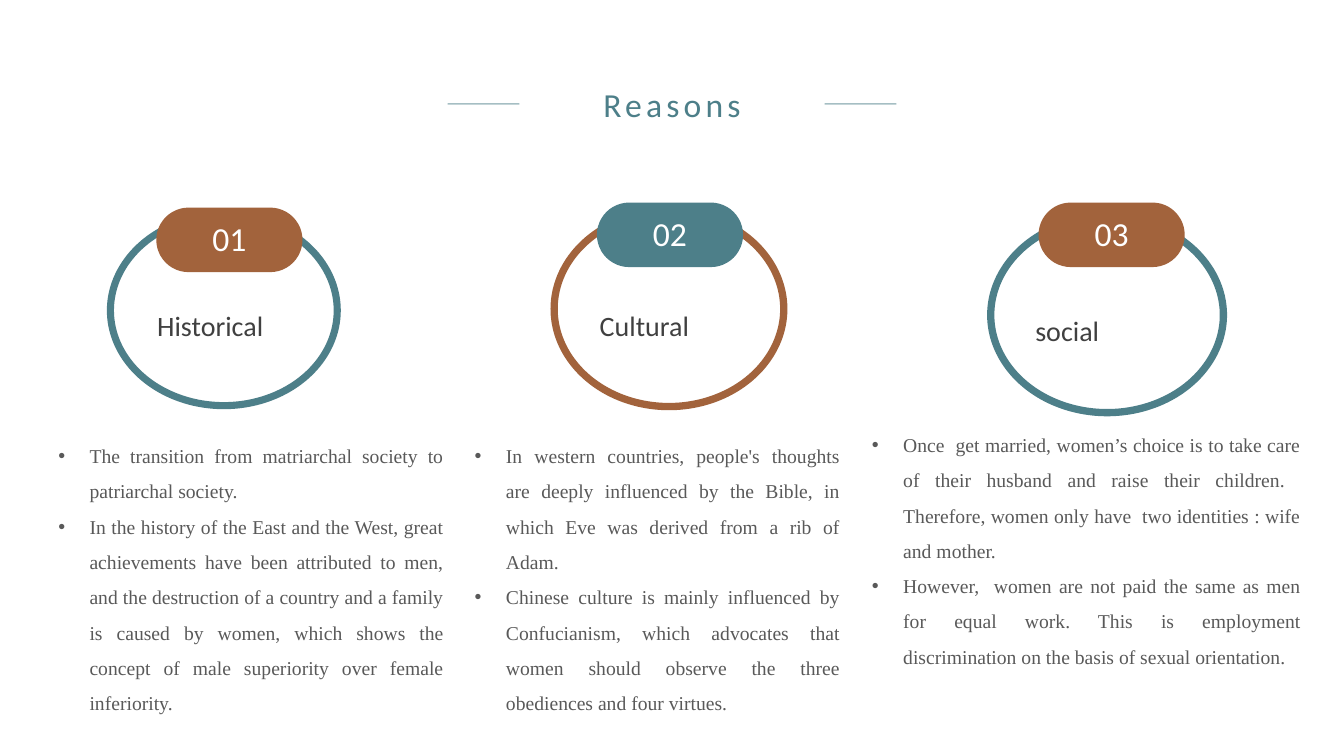
from dataclasses import dataclass

from lxml import etree
from pptx import Presentation
from pptx.dml.color import RGBColor
from pptx.enum.shapes import MSO_CONNECTOR, MSO_SHAPE
from pptx.enum.text import MSO_AUTO_SIZE, PP_ALIGN
from pptx.oxml.ns import qn
from pptx.util import Inches, Pt

STRAIGHT = MSO_CONNECTOR.STRAIGHT
DONUT = MSO_SHAPE.DONUT
PILL = MSO_SHAPE.ROUNDED_RECTANGLE
GROW = MSO_AUTO_SIZE.SHAPE_TO_FIT_TEXT
CENTER = PP_ALIGN.CENTER
JUSTIFY = PP_ALIGN.JUSTIFY


@dataclass(frozen=True)
class Theme:
    """Colours, fonts and type sizes of the slide."""
    teal: str = "4D7F89"
    brown: str = "A2633C"
    white: str = "FFFFFF"
    label: str = "404040"
    body: str = "595959"
    sans: str = "Calibri"
    serif: str = "Times New Roman"
    heading_size: int = 24
    label_size: int = 20
    body_size: int = 14


@dataclass(frozen=True)
class Reason:
    """One column: its wording, colours and the places of its parts."""
    number: str
    label: str
    points: tuple
    ring_color: str
    badge_color: str
    box: tuple
    ring: tuple
    badge: tuple
    label_at: tuple


THEME = Theme()
BADGE_SIZE = (1.45, 0.64)
NUMBER_SIZE = (0.54, 0.5)
LABEL_SIZE = (1.63, 0.44)
HEADING_BOX = (4.44, 0.78, 4.45, 0.5)

REASONS = (
    Reason(
        "01", "Historical ",
        ("The transition from matriarchal society to patriarchal society.",
         "In the history of the East and the West, great achievements have been "
         "attributed to men, and the destruction of a country and a family is caused "
         "by women, which shows the concept of male superiority over female "
         "inferiority."),
        THEME.teal, THEME.brown, (0.48, 4.24, 4.02, 2.93),
        (0.58, -2.14, 2.32, 1.96), (1.07, -2.18), (0.98, -1.23)),
    Reason(
        "02", "Cultural",
        ("In western countries, people's thoughts are deeply influenced by the Bible, "
         "in which Eve was derived from a rib of Adam.",
         "Chinese culture is mainly influenced by Confucianism, which advocates that "
         "women should observe the three obediences and four virtues."),
        THEME.brown, THEME.teal, (4.61, 4.24, 3.82, 2.93),
        (0.85, -2.18, 2.35, 2.01), (1.31, -2.23), (1.24, -1.23)),
    Reason(
        "03", "social",
        ("Once  get married, women’s choice is to take care of their husband and "
         "raise their children.  Therefore, women only have  two identities : wife "
         "and mother.",
         "However,  women are not paid the same as men for equal work. This is "
         "employment discrimination on the basis of sexual orientation."),
        THEME.teal, THEME.brown, (8.55, 4.13, 4.45, 2.57),
        (1.24, -2.01, 2.38, 2.01), (1.75, -2.12), (1.62, -1.07)),
)


def add_filled_shape(slide, kind, box, color, adjustment):
    """Add a flat preset shape without outline."""
    shape = slide.shapes.add_shape(kind, *map(Inches, box))
    shape.adjustments[0] = adjustment
    shape.shadow.inherit = False
    shape.fill.solid()
    shape.fill.fore_color.rgb = RGBColor.from_string(color)
    shape.line.fill.background()


def add_text(slide, box, lines, font, size, color, align, wrap=True):
    """Add a text box with one run per paragraph and return its paragraphs."""
    frame = slide.shapes.add_textbox(*map(Inches, box)).text_frame
    frame.word_wrap = wrap
    frame.auto_size = GROW
    for index, line in enumerate(lines):
        paragraph = frame.add_paragraph() if index else frame.paragraphs[0]
        paragraph.alignment = align
        run = paragraph.add_run()
        run.text = line
        run.font.name = font
        run.font.size = Pt(size)
        run.font.color.rgb = RGBColor.from_string(color)
    return frame.paragraphs


def add_bullet(paragraph):
    """Give a paragraph a hanging round bullet."""
    properties = paragraph._p.get_or_add_pPr()
    properties.set("marL", str(Inches(0.31)))
    properties.set("indent", str(Inches(-0.31)))
    etree.SubElement(properties, qn("a:buFont")).set("typeface", "Arial")
    etree.SubElement(properties, qn("a:buChar")).set("char", "•")


def add_rule(slide, left, top, length):
    """Add a half-transparent horizontal rule."""
    line = slide.shapes.add_connector(
        STRAIGHT, Inches(left), Inches(top), Inches(left + length), Inches(top))
    line.line.width = Pt(1)
    line.line.color.rgb = RGBColor.from_string(THEME.teal)
    color = line._element.spPr.find(".//" + qn("a:srgbClr"))
    etree.SubElement(color, qn("a:alpha")).set("val", "50000")
    etree.SubElement(line._element.spPr, qn("a:effectLst"))


def add_heading(slide, box):
    """Place the spaced heading between two rules."""
    left, top, width, height = box
    rule, inset = 0.71, 0.75
    for start in (left, left + width - rule):
        add_rule(slide, start, top + height / 2, rule)
    paragraphs = add_text(
        slide, (left + inset, top, width - 2 * inset, height), ["Reasons"],
        THEME.sans, THEME.heading_size, THEME.teal, CENTER)
    paragraphs[0].runs[0].font._element.set("spc", "300")


def add_reason(slide, reason, box):
    """Place the ring, badge and label above the column's bulleted text."""
    left, top = box[:2]
    ring_left, ring_top, *ring_size = reason.ring
    badge_left, badge_top = left + reason.badge[0], top + reason.badge[1]
    label_left, label_top = left + reason.label_at[0], top + reason.label_at[1]
    number_left = badge_left + (BADGE_SIZE[0] - NUMBER_SIZE[0]) / 2
    add_filled_shape(slide, DONUT, (left + ring_left, top + ring_top, *ring_size),
                     reason.ring_color, 0.036)
    add_filled_shape(slide, PILL, (badge_left, badge_top, *BADGE_SIZE),
                     reason.badge_color, 0.5)
    paragraphs = add_text(slide, box, reason.points, THEME.serif, THEME.body_size,
                          THEME.body, JUSTIFY)
    for paragraph in paragraphs:
        paragraph.line_spacing = 1.5
        add_bullet(paragraph)
    add_text(slide, (number_left, badge_top + 0.05, *NUMBER_SIZE), [reason.number],
             THEME.sans, THEME.heading_size, THEME.white, CENTER, wrap=False)
    add_text(slide, (label_left, label_top, *LABEL_SIZE), [reason.label],
             THEME.sans, THEME.label_size, THEME.label, JUSTIFY)


def main():
    """Build the slide and save it."""
    presentation = Presentation()
    presentation.slide_width = Inches(13.33)
    presentation.slide_height = Inches(7.5)
    slide = presentation.slides.add_slide(presentation.slide_layouts[6])
    for reason in REASONS:
        add_reason(slide, reason, reason.box)
    add_heading(slide, HEADING_BOX)
    presentation.save("out.pptx")


if __name__ == "__main__":
    main()
